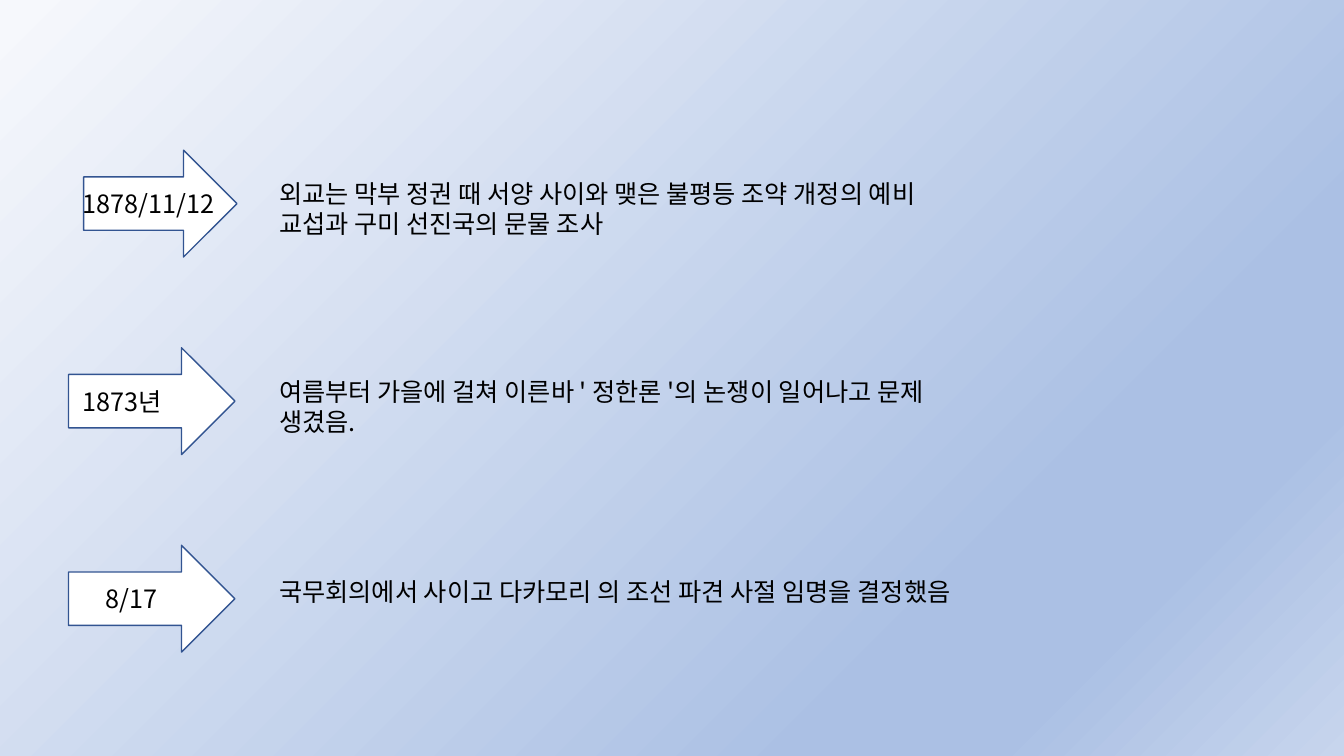
import pptx
import pptx.dml.color
import pptx.enum.shapes
import pptx.oxml.ns
import pptx.util
from lxml import etree

FONT = "Noto Sans CJK KR"
COLORS = {
    "text": "000000",
    "outline": "325491",
    "white": "FFFFFF",
    "pale": "F6F8FC",
    "blue": "ABC0E4",
    "light": "C7D5ED",
}
BACKGROUND_STOPS = [(1, "pale"), (74, "blue"), (83, "blue"), (100, "light")]
ARROW_STOPS = [(83, "white"), (100, "light")]

EVENTS = [
    {
        "date": "1878/11/12",
        "date_box": (0.72, 1.74),
        "arrow": (0.83, 1.52),
        "text": "외교는 막부 정권 때 서양 사이와 맺은 불평등 조약 개정의 예비 교섭과 구미 선진국의 문물 조사",
        "text_box": (1.72, 6.79, 1.01),
    },
    {
        "date": "1873년",
        "date_box": (0.72, 1.25),
        "arrow": (0.68, 1.65),
        "text": "여름부터 가을에 걸쳐 이른바 ' 정한론 '의 논쟁이 일어나고 문제 생겼음.",
        "text_box": (3.68, 7.3, 0.71),
    },
    {
        "date": "8/17",
        "date_box": (0.95, 1.16),
        "arrow": (0.68, 1.65),
        "text": "국무회의에서 사이고 다카모리 의 조선 파견 사절 임명을 결정했음",
        "text_box": (5.67, 7.3, 0.71),
    },
]
FIRST_TOP, ROW_STEP = 1.49, 1.96
ARROW_HEIGHT, DATE_HEIGHT = 1.06, 0.4
TEXT_LEFT = 2.67


def rgb(name):
    return pptx.dml.color.RGBColor.from_string(COLORS[name])


def inches(*lengths):
    return [pptx.util.Inches(length) for length in lengths]


def set_gradient(fill, element, stops):
    qn = pptx.oxml.ns.qn
    fill.gradient()
    fill.gradient_angle = 315
    stop_list = next(element.iter(qn("a:gsLst")))
    for stop in list(stop_list):
        stop_list.remove(stop)
    for percent, color in stops:
        stop = etree.SubElement(stop_list, qn("a:gs"), pos=str(percent * 1000))
        etree.SubElement(stop, qn("a:srgbClr"), val=COLORS[color])


def add_text(slide, text, left, top, width, height, size=18, color="text"):
    shape = slide.shapes.add_textbox(*inches(left, top, width, height))
    shape.text_frame.word_wrap = True
    run = shape.text_frame.paragraphs[0].add_run()
    run.text = text
    run.font.size = pptx.util.Pt(size)
    run.font.name = FONT
    run.font.color.rgb = rgb(color)
    properties = run.font._element
    etree.SubElement(properties, pptx.oxml.ns.qn("a:ea"), typeface=FONT)


def add_arrow(slide, left, top, width, height):
    arrow = slide.shapes.add_shape(
        pptx.enum.shapes.MSO_SHAPE.RIGHT_ARROW, *inches(left, top, width, height)
    )
    arrow.shadow.inherit = False
    set_gradient(arrow.fill, arrow.element, ARROW_STOPS)
    arrow.line.color.rgb = rgb("outline")
    arrow.line.width = pptx.util.Pt(1)


def main():
    presentation = pptx.Presentation()
    presentation.slide_width, presentation.slide_height = inches(13.33, 7.5)
    slide = presentation.slides.add_slide(presentation.slide_layouts[6])
    set_gradient(slide.background.fill, slide.element, BACKGROUND_STOPS)

    for index, event in enumerate(EVENTS):
        top = FIRST_TOP + index * ROW_STEP
        arrow_left, arrow_width = event["arrow"]
        add_arrow(slide, arrow_left, top, arrow_width, ARROW_HEIGHT)
        date_left, date_width = event["date_box"]
        date_top = top + (ARROW_HEIGHT - DATE_HEIGHT) / 2
        add_text(slide, event["date"], date_left, date_top, date_width, DATE_HEIGHT)
        add_text(slide, event["text"], TEXT_LEFT, *event["text_box"])

    presentation.save("out.pptx")


if __name__ == "__main__":
    main()
